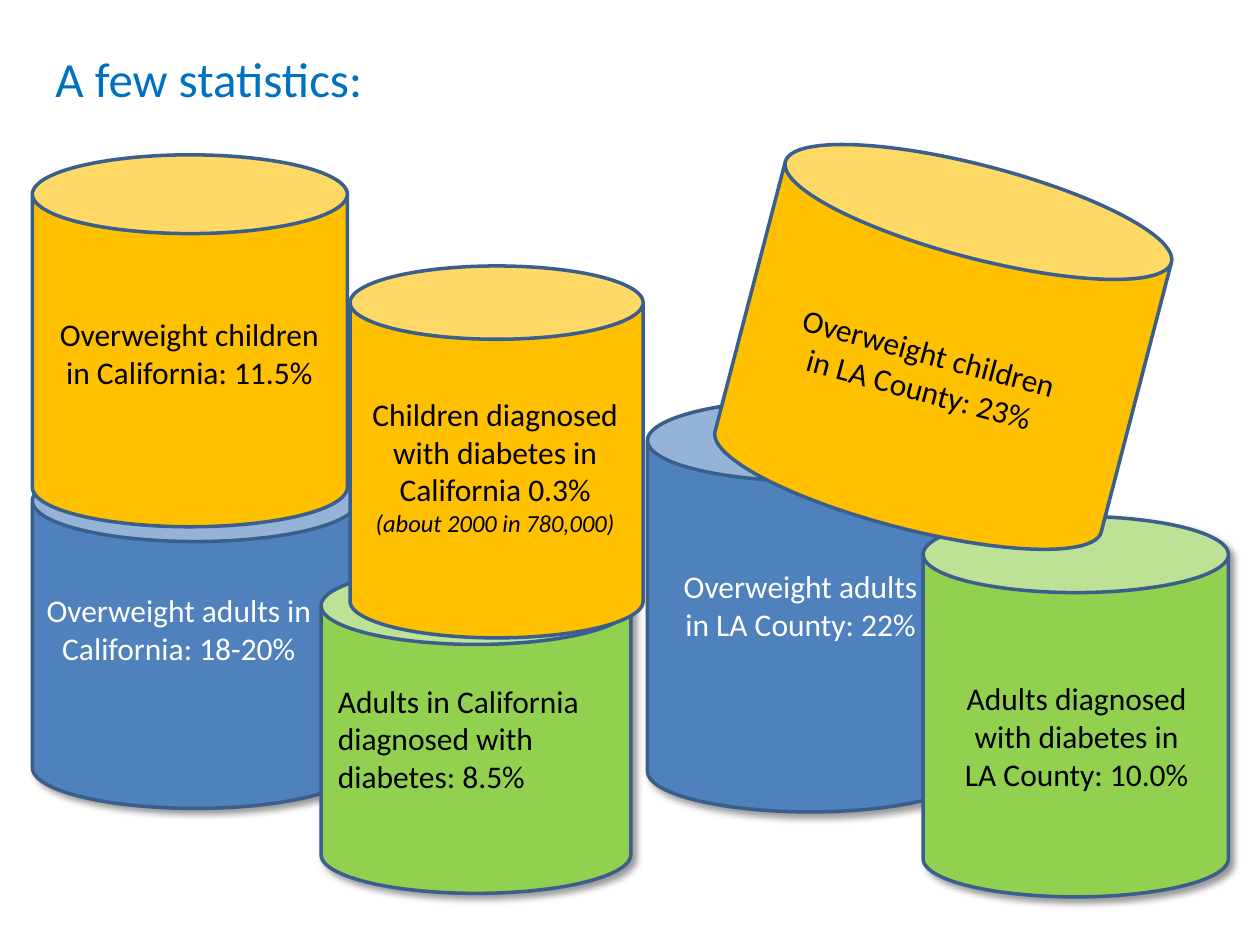
import pptx
import pptx.dml.color
import pptx.enum.shapes
import pptx.enum.text
import pptx.oxml
import pptx.oxml.ns
import pptx.util

Pt = pptx.util.Pt
ALIGN = pptx.enum.text.PP_ALIGN
ANCHOR = pptx.enum.text.MSO_ANCHOR
CAN = pptx.enum.shapes.MSO_SHAPE.CAN

BLUE, GREEN, YELLOW = "4F81BD", "92D050", "FFC000"
OUTLINE, TITLE, WHITE, BLACK = "3A5F8C", "0070C0", "FFFFFF", "000000"

SHADOW = (
    f'<a:effectLst {pptx.oxml.ns.nsdecls("a")}>'
    '<a:outerShdw blurRad="50800" dist="38100" dir="2700000" algn="tl" rotWithShape="0">'
    '<a:srgbClr val="000000"><a:alpha val="40000"/></a:srgbClr>'
    '</a:outerShdw></a:effectLst>'
)


def rgb(value):
    return pptx.dml.color.RGBColor.from_string(value)


class Deck:
    font = "Calibri"
    size = 18
    line_width = 2

    def __init__(self, width, height):
        self.prs = pptx.Presentation()
        self.prs.slide_width = Pt(width)
        self.prs.slide_height = Pt(height)
        self.s = self.prs.slides.add_slide(self.prs.slide_layouts[5])

    def style(self, p, size, color, align):
        p.alignment = align
        for r in p.runs:
            r.font.name = self.font
            r.font.size = Pt(size)
            r.font.color.rgb = rgb(color)

    def title(self, text, x, y, w, h):
        sp = self.s.shapes.title
        sp.left, sp.top, sp.width, sp.height = Pt(x), Pt(y), Pt(w), Pt(h)
        tf = sp.text_frame
        tf.text = text
        tf.vertical_anchor = ANCHOR.TOP
        self.style(tf.paragraphs[0], 28, TITLE, ALIGN.LEFT)

    def can(self, group, box, fill, shadow, rotation):
        sp = group.shapes.add_shape(CAN, *map(Pt, box))
        sp.rotation = rotation
        sp.fill.solid()
        sp.fill.fore_color.rgb = rgb(fill)
        sp.line.color.rgb = rgb(OUTLINE)
        sp.line.width = Pt(self.line_width)
        sp.shadow.inherit = False
        if shadow:
            effects = sp._element.spPr.find(pptx.oxml.ns.qn("a:effectLst"))
            effects.getparent().replace(effects, pptx.oxml.parse_xml(SHADOW))

    def label(self, group, box, text, color, align, rotation):
        sp = group.shapes.add_textbox(*map(Pt, box))
        sp.rotation = rotation
        tf = sp.text_frame
        tf.word_wrap = True
        tf.text = text
        for p in tf.paragraphs:
            self.style(p, self.size, color, align)
        return tf

    def statistic(self, text, can_box, label_box, fill, color=BLACK,
                  align=ALIGN.CENTER, shadow=True, rotations=(0, 0)):
        group = self.s.shapes.add_group_shape()
        self.can(group, can_box, fill, shadow, rotations[0])
        return self.label(group, label_box, text, color, align, rotations[1])

    def save(self):
        self.prs.save("out.pptx")


def main():
    deck = Deck(720, 540)
    deck.title("A few statistics:", 24.5, 24, 312, 41)

    deck.statistic("Overweight adults in California: 18-20%",
                   (18.5, 263, 186, 199), (18, 334, 168.5, 51), BLUE, WHITE)
    deck.statistic("Overweight adults\nin LA County: 22%",
                   (370, 228.5, 186, 235.5), (364.5, 320.5, 186, 51), BLUE, WHITE)
    deck.statistic("Adults diagnosed with diabetes in LA County: 10.0%",
                   (527.5, 295, 174.5, 217.5), (540, 384.5, 150.5, 73), GREEN)
    deck.statistic("Adults in California diagnosed with diabetes: 8.5%",
                   (183.5, 324, 177, 186.5), (186, 386, 174, 68.5), GREEN,
                   align=ALIGN.LEFT)
    deck.statistic("Overweight children in California: 11.5%",
                   (18.5, 88.5, 180, 212.5), (24, 176.5, 168.5, 51), YELLOW,
                   shadow=False)
    tf = deck.statistic(
        "Children diagnosed with diabetes in California 0.3%\n(about 2000 in 780,000)",
        (200, 152, 167.5, 212.5), (200, 222, 166, 90), YELLOW, shadow=False)
    note = tf.paragraphs[1].runs[0].font
    note.size = Pt(14)
    note.italic = True
    deck.statistic("Overweight children in LA County: 23%",
                   (425, 92, 228, 212.5), (444, 186.5, 168, 51), YELLOW,
                   shadow=False, rotations=(14.6, 15))
    deck.save()


if __name__ == "__main__":
    main()
